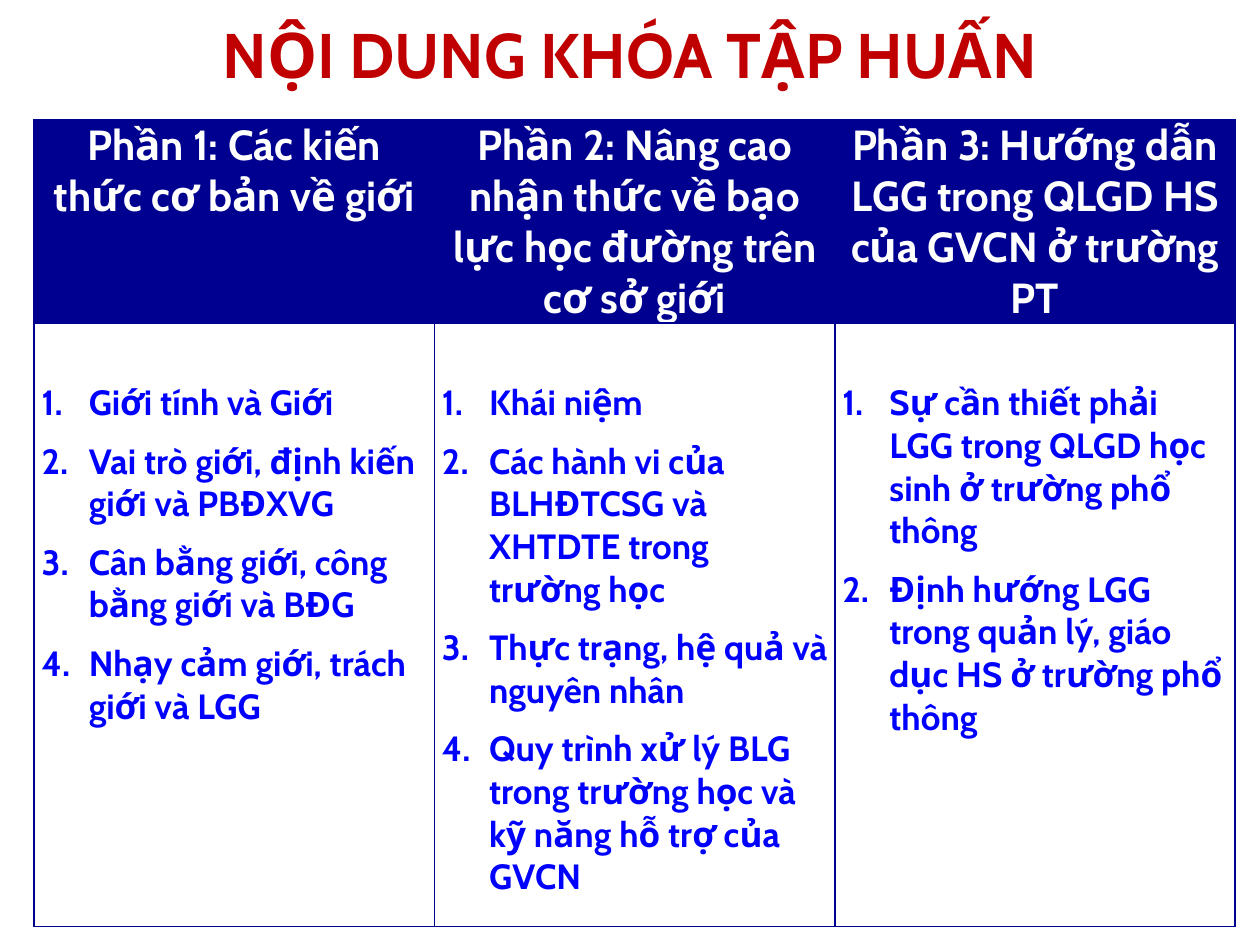
from lxml.etree import SubElement
from pptx import Presentation
from pptx.dml.color import RGBColor
from pptx.enum.text import MSO_ANCHOR, PP_ALIGN
from pptx.oxml.ns import qn
from pptx.util import Cm, Pt

FONT = "Cabin"
RED = RGBColor(0xC0, 0x00, 0x00)
NAVY = RGBColor(0x00, 0x00, 0x90)
BLUE = RGBColor(0x00, 0x00, 0xFF)
WHITE = RGBColor(0xFF, 0xFF, 0xFF)

PARTS = [
    ("Phần 1: Các kiến thức cơ bản về giới", [
        "Giới tính và Giới",
        "Vai trò giới, định kiến giới và PBĐXVG",
        "Cân bằng giới, công bằng giới và BĐG",
        "Nhạy cảm giới, trách giới và LGG",
    ]),
    ("Phần 2: Nâng cao nhận thức về bạo lực học đường trên cơ sở giới", [
        "Khái niệm",
        "Các hành vi của BLHĐTCSG và XHTDTE trong trường học",
        "Thực trạng, hệ quả và nguyên nhân",
        "Quy trình xử lý BLG trong trường học và kỹ năng hỗ trợ của GVCN",
    ]),
    ("Phần 3: Hướng dẫn LGG trong QLGD HS của GVCN ở trường PT", [
        "Sự cần thiết phải LGG trong QLGD học sinh ở trường phổ thông",
        "Định hướng LGG trong quản lý, giáo dục HS ở trường phổ thông",
    ]),
]


def write(paragraph, text, size, color):
    paragraph.text = text
    font = paragraph.font
    font.name, font.size, font.bold = FONT, Pt(size), True
    font.color.rgb = color


def format_cell(cell, fill):
    """Set the margins, the navy borders and the fill of a table cell."""
    cell.margin_left = cell.margin_right = Cm(0.15)
    cell.margin_top = cell.margin_bottom = 0
    properties = cell._tc.get_or_add_tcPr()
    for side in ("a:lnL", "a:lnR", "a:lnT", "a:lnB"):
        line = SubElement(properties, qn(side), w=str(Pt(1)))
        SubElement(SubElement(line, qn("a:solidFill")), qn("a:srgbClr"), val=str(NAVY))
    cell.fill.solid()
    cell.fill.fore_color.rgb = fill


presentation = Presentation()
presentation.slide_width, presentation.slide_height = Cm(25.4), Cm(19.05)
slide = presentation.slides.add_slide(presentation.slide_layouts[6])

title = slide.shapes.add_textbox(Cm(1.75), Cm(0.28), Cm(21.9), Cm(1.6))
title_frame = title.text_frame
title_frame.word_wrap = True
title_frame.vertical_anchor = MSO_ANCHOR.MIDDLE
write(title_frame.paragraphs[0], "NỘI DUNG KHÓA TẬP HUẤN", 36, RED)
title_frame.paragraphs[0].alignment = PP_ALIGN.CENTER

table = slide.shapes.add_table(
    2, len(PARTS), Cm(0.69), Cm(2.41), Cm(24.21), Cm(16.27)
).table
table.rows[0].height, table.rows[1].height = Cm(4.1), Cm(12.17)

for column, (heading, topics) in enumerate(PARTS):
    header, body = table.cell(0, column), table.cell(1, column)
    format_cell(header, NAVY)
    write(header.text_frame.paragraphs[0], heading, 24, WHITE)
    header.text_frame.paragraphs[0].alignment = PP_ALIGN.CENTER

    format_cell(body, WHITE)
    body.margin_top = Cm(1.19)
    for index, topic in enumerate(topics):
        frame = body.text_frame
        paragraph = frame.add_paragraph() if index else frame.paragraphs[0]
        write(paragraph, topic, 20, BLUE)
        if index:
            paragraph.space_before = Pt(9)
        properties = paragraph._p.get_or_add_pPr()
        properties.set("marL", str(Cm(0.95)))
        properties.set("indent", str(-Cm(0.95)))
        numbering = properties.makeelement(qn("a:buAutoNum"), {"type": "arabicPeriod"})
        properties.find(qn("a:defRPr")).addprevious(numbering)

presentation.save("out.pptx")
